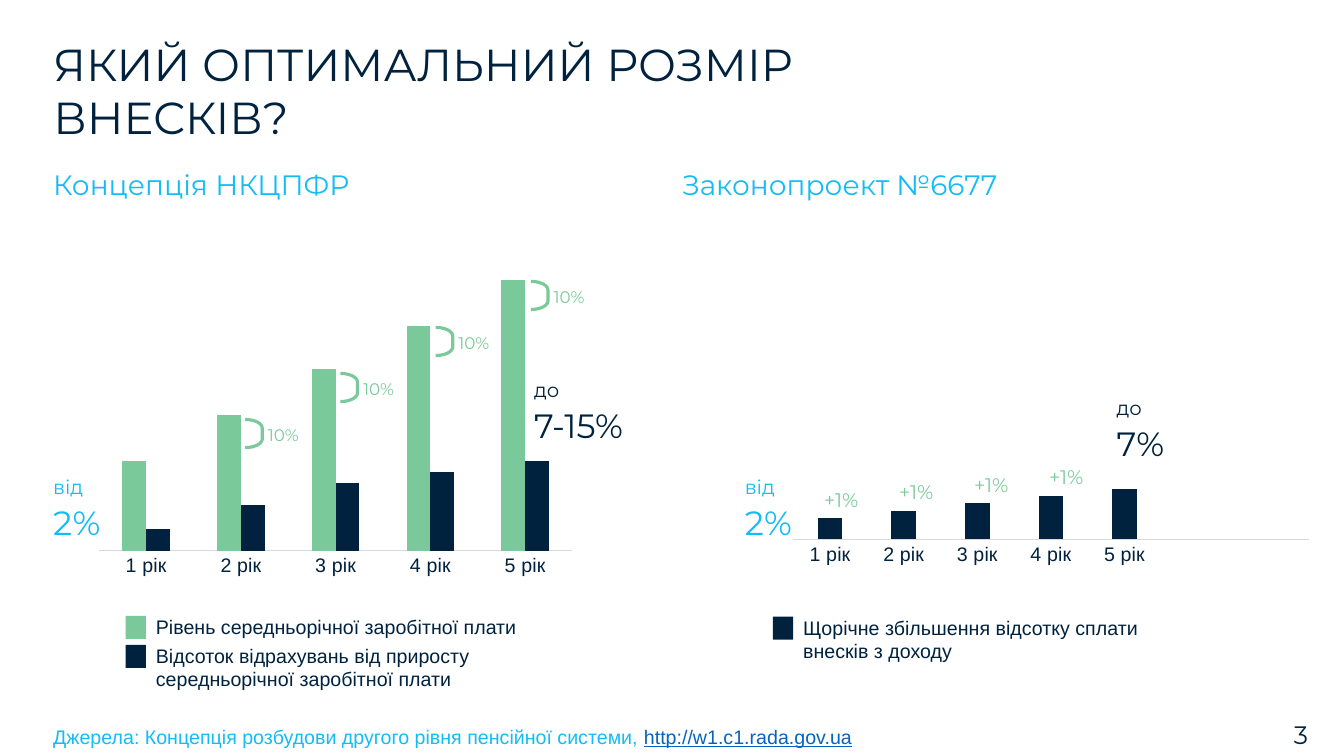
import pptx
import pptx.chart.data
import pptx.dml.color
import pptx.enum.chart
import pptx.enum.shapes
import pptx.enum.text
import pptx.oxml
import pptx.util
from pptx.util import Cm, Pt

NAVY = pptx.dml.color.RGBColor(0x00, 0x22, 0x3E)
SKY = pptx.dml.color.RGBColor(0x13, 0xBC, 0xF5)
GREEN = pptx.dml.color.RGBColor(0x7A, 0xC9, 0x9A)
LINK_BLUE = pptx.dml.color.RGBColor(0x05, 0x63, 0xC1)
AXIS_GREY = pptx.dml.color.RGBColor(0xD9, 0xD9, 0xD9)
CHART_NAMESPACE = "http://schemas.openxmlformats.org/drawingml/2006/chart"

deck = pptx.Presentation()
deck.slide_width, deck.slide_height = Cm(33.87), Cm(19.05)
page = deck.slides.add_slide(deck.slide_layouts[5])


def add_text(place, lines, size, color, font="Montserrat"):
    box = page.shapes.add_textbox(*[Cm(length) for length in place])
    frame = box.text_frame
    frame.word_wrap = True
    frame.text = "\n".join(lines)
    for para in frame.paragraphs:
        para.font.name = font
        para.font.size = Pt(size)
        para.font.color.rgb = color
    return frame


def add_columns(place, plot, categories, series, maximum):
    chart_data = pptx.chart.data.CategoryChartData()
    chart_data.categories = categories
    for name, values, color in series:
        chart_data.add_series(name, values)
    chart = page.shapes.add_chart(
        pptx.enum.chart.XL_CHART_TYPE.COLUMN_CLUSTERED,
        *[Cm(length) for length in place], chart_data).chart
    chart.has_title = False
    chart.has_legend = False
    chart.font.name = "Arial"
    chart.font.size = Pt(14)
    chart.font.color.rgb = NAVY

    columns = chart.plots[0]
    columns.vary_by_categories = False
    columns.gap_width = 199
    columns.overlap = 0
    for column_series, (name, values, color) in zip(columns.series, series):
        column_series.format.fill.solid()
        column_series.format.fill.fore_color.rgb = color

    chart.category_axis.major_tick_mark = pptx.enum.chart.XL_TICK_MARK.NONE
    chart.category_axis.format.line.color.rgb = AXIS_GREY
    chart.category_axis.format.line.width = Pt(0.75)
    chart.value_axis.visible = False
    chart.value_axis.has_major_gridlines = False
    chart.value_axis.minimum_scale = 0
    chart.value_axis.maximum_scale = maximum

    # Fixed inner plot area, as fractions of the chart
    parts = "".join(f'<c:{key} val="{value}"/>' for key, value in zip("xywh", plot))
    layout = pptx.oxml.parse_xml(
        f'<c:layout xmlns:c="{CHART_NAMESPACE}"><c:manualLayout>'
        '<c:layoutTarget val="inner"/><c:xMode val="edge"/><c:yMode val="edge"/>'
        f'{parts}</c:manualLayout></c:layout>')
    plot_area = columns._element.getparent()
    for old_layout in plot_area.findall(f"{{{CHART_NAMESPACE}}}layout"):
        plot_area.remove(old_layout)
    plot_area.insert(0, layout)


# Title
title = page.shapes.title
title.left, title.top, title.width, title.height = Cm(1.09), Cm(0.79), Cm(21.13), Cm(3)
title.text_frame.text = "ЯКИЙ ОПТИМАЛЬНИЙ РОЗМІР ВНЕСКІВ?"
title.text_frame.auto_size = pptx.enum.text.MSO_AUTO_SIZE.NONE
title.text_frame.vertical_anchor = pptx.enum.text.MSO_ANCHOR.TOP
title_para = title.text_frame.paragraphs[0]
title_para.alignment = pptx.enum.text.PP_ALIGN.LEFT
title_para.font.name = "Montserrat"
title_para.font.size = Pt(32)
title_para.font.color.rgb = NAVY

# Charts; the right one keeps two empty slots after the fifth year
years = [f"{year} рік" for year in range(1, 6)]
add_columns((18.85, 6.48, 14.27, 8.18), (0.08, 0.69, 0.91, 0.18), years + ["", ""],
            [("Series 1", (43, 57, 71, 86, 100, None, None), NAVY)], 115)
add_columns((2.11, 5.05, 12.7, 9.7), (0.03, 0.03, 0.94, 0.88), years,
            [("Series 1", (33, 50, 67, 83, 100), GREEN),
             ("Series 2", (8, 17, 25, 29, 33), NAVY)], 125)

# Column headings
for left, heading in ((1.09, "Концепція НКЦПФР"), (16.94, "Законопроект №6677")):
    add_text((left, 4.09, 10.62, 1.12), [heading], 20, SKY)

# Legends
for left, top, height, color, label in (
        (3.68, 15.37, 0.86, GREEN, "Рівень середньорічної заробітної плати"),
        (3.68, 16.1, 1.45, NAVY,
         "Відсоток відрахувань від приросту середньорічної заробітної плати"),
        (19.99, 15.39, 1.45, NAVY,
         "Щорічне збільшення відсотку сплати внесків з доходу")):
    add_text((left, top, 9.78, height), [label], 14, NAVY, "Arial")
    swatch = page.shapes.add_shape(pptx.enum.shapes.MSO_SHAPE.RECTANGLE,
                                   Cm(left - 0.51), Cm(top + 0.15), Cm(0.51), Cm(0.58))
    swatch.shadow.inherit = False
    swatch.fill.solid()
    swatch.fill.fore_color.rgb = color
    swatch.line.fill.background()

# Start and end rates
for left, top, width, word, rate, color in (
        (1.09, 11.48, 2.08, "від", "2%", SKY),
        (13.21, 9.04, 4.24, "до", "7-15%", NAVY),
        (18.52, 11.48, 2.08, "від", "2%", SKY),
        (27.89, 9.5, 2.36, "до", "7%", NAVY)):
    frame = add_text((left, top, width, 2.31), [word, rate], 24, color)
    frame.vertical_anchor = pptx.enum.text.MSO_ANCHOR.BOTTOM
    frame.paragraphs[0].font.size = Pt(14)
    frame.paragraphs[0].space_after = Pt(2.5)

# Yearly growth marks
for step in range(4):
    left, top = 6.18 + 2.4 * step, 10.57 - 1.16 * step
    bracket = page.shapes.add_shape(pptx.enum.shapes.MSO_SHAPE.RIGHT_BRACKET,
                                    Cm(left), Cm(top), Cm(0.43), Cm(0.71))
    bracket.adjustments[0] = 0.5
    bracket.shadow.inherit = False
    bracket.fill.background()
    bracket.line.color.rgb = GREEN
    bracket.line.width = Pt(2.25)
    add_text((left + 0.32, top + 0.02, 1.85, 0.76), ["10%"], 12, GREEN)
    add_text((20.52 + 1.89 * step, 12.17 - 0.19 * step, 2.59, 0.86), ["+1%"], 14, GREEN)

# Source line and page number
source = add_text((1.09, 18.14, 28.45, 0.86),
                  ["Джерела: Концепція розбудови другого рівня пенсійної системи, "],
                  14, SKY, "Arial")
address = source.paragraphs[0].add_run()
address.text = "http://w1.c1.rada.gov.ua"
address.font.underline = True
address.font.color.rgb = LINK_BLUE
add_text((32.36, 18.01, 0.79, 1.02), ["3"], 18, NAVY)

deck.save("out.pptx")
